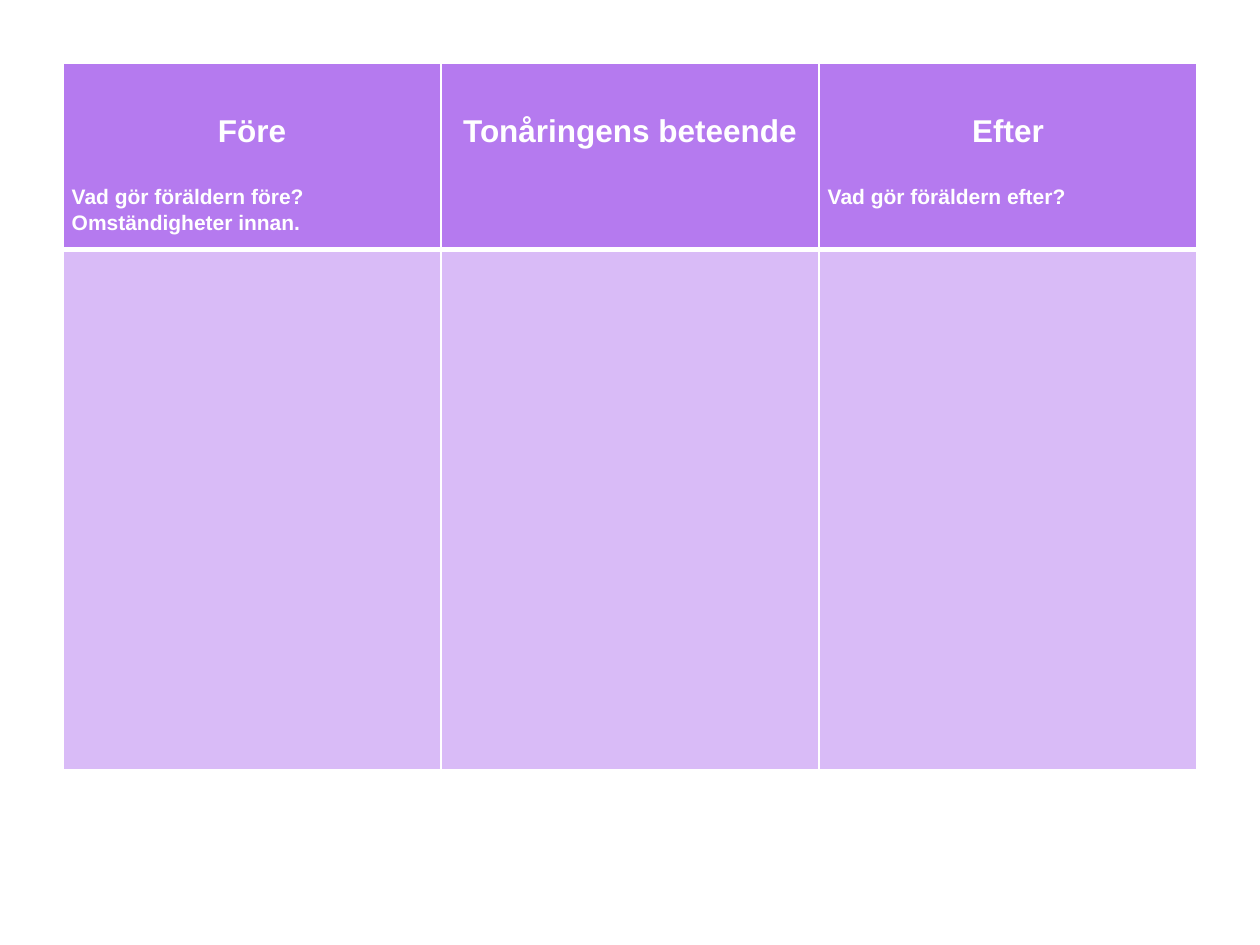
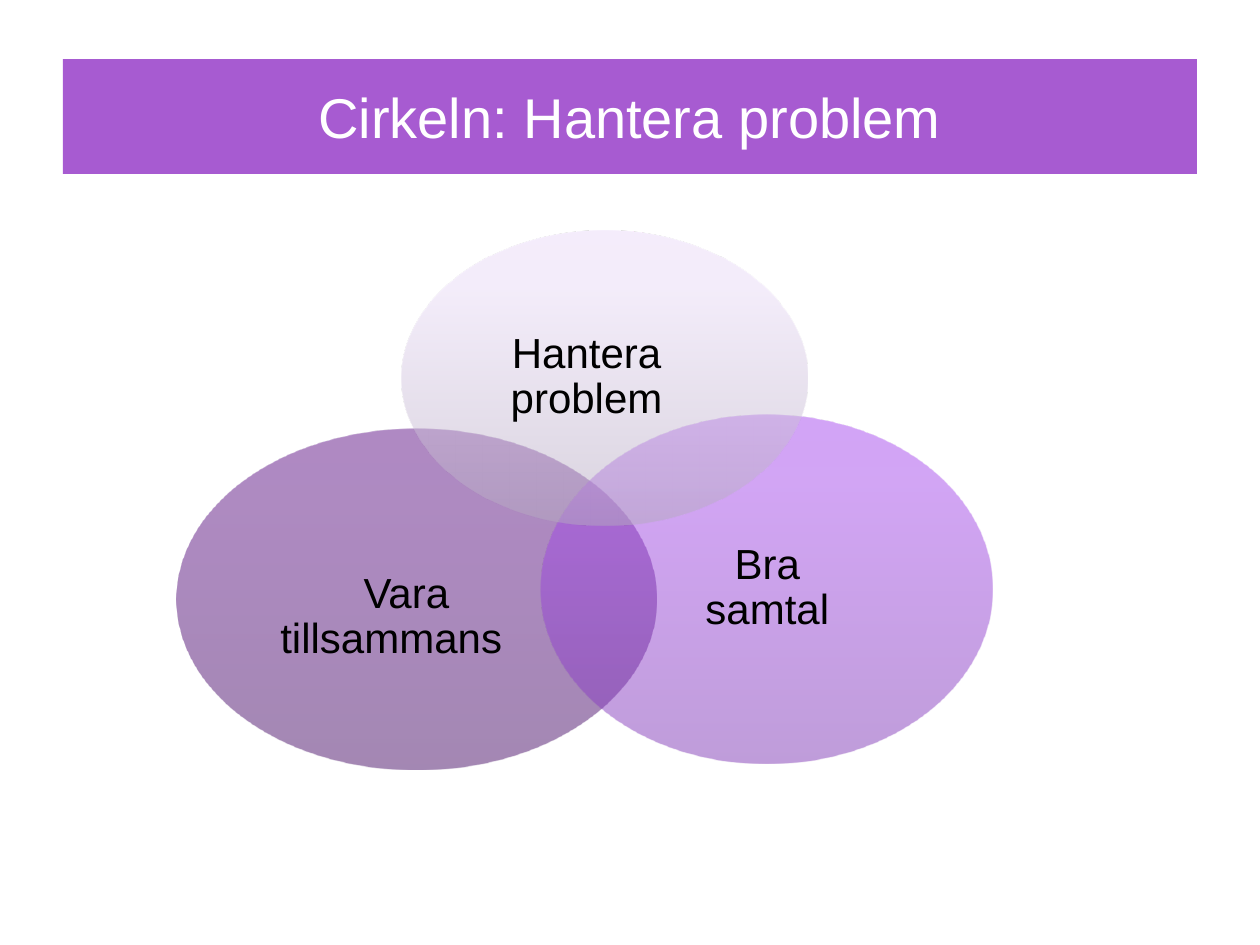
from lxml import etree
from pptx import Presentation
from pptx.dml.color import RGBColor
from pptx.enum.shapes import MSO_SHAPE
from pptx.enum.text import MSO_ANCHOR, PP_ALIGN
from pptx.oxml.ns import qn
from pptx.util import Pt

RECTANGLE, OVAL = MSO_SHAPE.RECTANGLE, MSO_SHAPE.OVAL
MIDDLE = MSO_ANCHOR.MIDDLE
CENTER, LEFT = PP_ALIGN.CENTER, PP_ALIGN.LEFT

FONT = "Arial"
WHITE, BLACK = "FFFFFF", "000000"
HEADER_FILL, BODY_FILL, BAND_FILL = "B57AEF", "D9BBF7", "A75BD1"
MARGIN, CONTENT_WIDTH = 36, 648

COLUMNS = [
    ("Före", "Vad gör föräldern före? Omständigheter innan."),
    ("Tonåringens beteende", None),
    ("Efter", "Vad gör föräldern efter?"),
]
ROW_HEIGHTS = (106.56, 297.36)
HEADER_BORDERS = {"L": 1, "R": 1, "T": 1, "B": 3}
BODY_BORDERS = dict.fromkeys("LRTB", 1)

TITLE = "Cirkeln: Hantera problem"
STOP_POSITIONS = (0, 80, 100)
CIRCLES = [
    {"text": "Vara tillsammans\t", "oval": (100.8, 244.8, 274.32, 195.12),
     "label": (141.12, 272.88, 193.68, 137.52), "insets": (5.76, 24, 17.28, 1.44),
     "colors": ("481067", "5E1586", "5F1389")},
    {"text": "Bra samtal", "oval": (308.88, 236.88, 258.48, 199.44),
     "label": (347.04, 265.68, 182.88, 141.12), "insets": (36.72, 2, 36.72, 2),
     "colors": ("813AB6", "A74BEC", "A849F0")},
    {"text": "Hantera problem", "oval": (229.68, 131.76, 231.84, 168.48),
     "label": (264.24, 156.24, 164.16, 118.8), "insets": (14.4, 2, 36.72, 2),
     "colors": ("B4A9BF", "EADCF7", "EBDCF9")},
]


def rgb(color):
    return RGBColor.from_string(color)


def points(values):
    return [Pt(value) for value in values]


def set_insets(target, left, top, right, bottom):
    target.margin_left, target.margin_top = Pt(left), Pt(top)
    target.margin_right, target.margin_bottom = Pt(right), Pt(bottom)


def style(para, size, color, align=CENTER, bold=False):
    para.alignment = align
    font = para.font
    font.name, font.size, font.bold = FONT, Pt(size), bold
    font.color.rgb = rgb(color)


def fill_cell(cell, color, borders):
    cell.fill.solid()
    cell.fill.fore_color.rgb = rgb(color)
    properties = cell._tc.get_or_add_tcPr()
    for index, (side, width) in enumerate(borders.items()):
        line = etree.Element(qn(f"a:ln{side}"), w=str(Pt(width)))
        solid = etree.SubElement(line, qn("a:solidFill"))
        etree.SubElement(solid, qn("a:srgbClr"), val=WHITE)
        properties.insert(index, line)


def write_header(cell, heading, question):
    set_insets(cell, 5, 34.2, 5, 0)
    frame = cell.text_frame
    lines = [(heading, 18, CENTER)]
    if question:
        lines.append((question, 12, LEFT))
    for index, (text, size, align) in enumerate(lines):
        para = frame.add_paragraph() if index else frame.paragraphs[0]
        para.text = text
        para.line_spacing = Pt(15)
        para.space_before, para.space_after = Pt(12 if index else 0), Pt(7.2)
        style(para, size, WHITE, align, bold=True)


def add_plain_shape(page, kind, place):
    shape = page.shapes.add_shape(kind, *points(place))
    shape.shadow.inherit = False
    shape.line.fill.background()
    return shape


def fill_gradient(shape, colors):
    shape.fill.gradient()
    shape.fill.gradient_angle = 90
    stops = shape._element.spPr.find(".//" + qn("a:gsLst"))
    for stop in list(stops):
        stops.remove(stop)
    for position, color in zip(STOP_POSITIONS, colors):
        stop = etree.SubElement(stops, qn("a:gs"), pos=str(position * 1000))
        shade = etree.SubElement(stop, qn("a:srgbClr"), val=color)
        etree.SubElement(shade, qn("a:alpha"), val="50000")


def add_label(page, text, place, insets):
    box = page.shapes.add_textbox(*points(place))
    frame = box.text_frame
    frame.word_wrap = True
    frame.vertical_anchor = MIDDLE
    set_insets(frame, *insets)
    para = frame.paragraphs[0]
    para.add_run().text = text
    para.line_spacing = 0.9
    style(para, 24, BLACK)


def build_table_page(page):
    place = points((MARGIN, MARGIN, CONTENT_WIDTH, sum(ROW_HEIGHTS)))
    table = page.shapes.add_table(len(ROW_HEIGHTS), len(COLUMNS), *place).table
    table.horz_banding = False
    for row, height in zip(table.rows, ROW_HEIGHTS):
        row.height = Pt(height)
    for index, (heading, question) in enumerate(COLUMNS):
        table.columns[index].width = Pt(CONTENT_WIDTH / len(COLUMNS))
        write_header(table.cell(0, index), heading, question)
        fill_cell(table.cell(0, index), HEADER_FILL, HEADER_BORDERS)
        fill_cell(table.cell(1, index), BODY_FILL, BODY_BORDERS)


def build_circle_page(page):
    for circle in CIRCLES:
        oval = add_plain_shape(page, OVAL, circle["oval"])
        fill_gradient(oval, circle["colors"])
        add_label(page, circle["text"], circle["label"], circle["insets"])
    band = add_plain_shape(page, RECTANGLE, (MARGIN, 33.84, CONTENT_WIDTH, 65.52))
    band.fill.solid()
    band.fill.fore_color.rgb = rgb(BAND_FILL)
    frame = band.text_frame
    frame.vertical_anchor = MIDDLE
    set_insets(frame, 0, 0, 0, 0)
    frame.text = TITLE
    style(frame.paragraphs[0], 32, WHITE)


def main():
    """Build the behaviour table and the circle diagram."""
    deck = Presentation()
    deck.slide_width, deck.slide_height = Pt(720), Pt(540)
    for build in (build_table_page, build_circle_page):
        build(deck.slides.add_slide(deck.slide_layouts[6]))
    deck.save("out.pptx")


if __name__ == "__main__":
    main()
